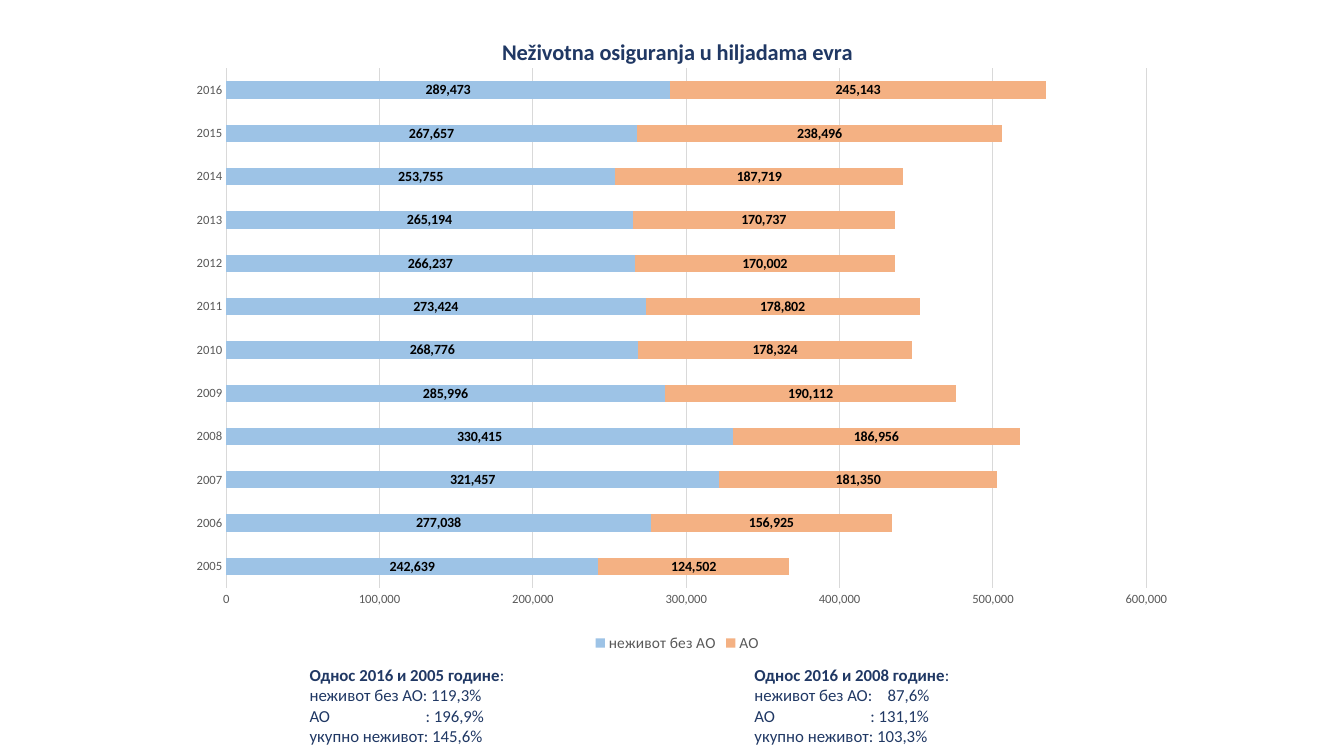
from dataclasses import dataclass

from lxml import etree
from pptx import Presentation
from pptx.chart.data import CategoryChartData
from pptx.dml.color import RGBColor
from pptx.enum.chart import XL_CHART_TYPE, XL_LABEL_POSITION, XL_LEGEND_POSITION, XL_TICK_MARK
from pptx.enum.text import MSO_AUTO_SIZE
from pptx.oxml.ns import qn
from pptx.util import Inches, Pt

STACKED = XL_CHART_TYPE.BAR_STACKED
BOTTOM = XL_LEGEND_POSITION.BOTTOM
CENTER = XL_LABEL_POSITION.CENTER
NO_TICK = XL_TICK_MARK.NONE
GROW = MSO_AUTO_SIZE.SHAPE_TO_FIT_TEXT

WIDE, HIGH = 13.33, 7.5
FACE = "Calibri"
NAVY, GREY, RULE, BLACK = "203864", "595959", "D9D9D9", "000000"
COUNT = "#,##0"


@dataclass
class Band:
    name: str
    color: str
    vals: tuple[int, ...]


@dataclass
class Row:
    text: str
    stop: float = 0  # tab stop in inches


@dataclass
class Note:
    left: float  # share of slide width
    width: float
    head: str
    rows: tuple[Row, ...]


BANDS = (
    Band("неживот без АО", "9DC3E6",
         (242639, 277038, 321457, 330415, 285996, 268776,
          273424, 266237, 265194, 253755, 267657, 289473)),
    Band("АО", "F4B183",
         (124502, 156925, 181350, 186956, 190112, 178324,
          178802, 170002, 170737, 187719, 238496, 245143)),
)
NOTES = (
    Note(0.223, 0.212, "Однос 2016 и 2005 године",
         (Row("неживот без АО: 119,3%"), Row("АО\t: 196,9%", 1.15),
          Row("укупно неживот: 145,6%"))),
    Note(0.554, 0.218, "Однос 2016 и 2008 године",
         (Row("неживот без АО:\t87,6%", 1.32), Row("АО\t: 131,1%", 1.15),
          Row("укупно неживот: 103,3%"))),
)


def paint(text: str) -> RGBColor:
    return RGBColor.from_string(text)


def area(left: float, top: float, width: float, height: float) -> list[int]:
    """Turn shares of the slide into lengths."""
    return [Inches(left * WIDE), Inches(top * HIGH),
            Inches(width * WIDE), Inches(height * HIGH)]


def style(font, size: float, color: str, bold: bool = False) -> None:
    font.name, font.size, font.bold = FACE, Pt(size), bold
    font.color.rgb = paint(color)


def write(para, text: str, size: float = 12, color: str = NAVY,
          bold: bool = False) -> None:
    run = para.add_run()
    run.text = text
    style(run.font, size, color, bold)


def place(part, index: int, **marks) -> None:
    """Give a chart part a manual layout."""
    for old in part.findall(qn("c:layout")):
        part.remove(old)
    frame = etree.Element(qn("c:layout"))
    inner = etree.SubElement(frame, qn("c:manualLayout"))
    for tag, val in marks.items():
        etree.SubElement(inner, qn(f"c:{tag}")).set("val", str(val))
    part.insert(index, frame)


def rule(line) -> None:
    line.color.rgb = paint(RULE)
    line.width = Pt(0.75)


def draw_chart(slide) -> None:
    data = CategoryChartData(number_format=COUNT)
    data.categories = [str(year) for year in range(2005, 2017)]
    for band in BANDS:
        data.add_series(band.name, band.vals)
    chart = slide.shapes.add_chart(
        STACKED, *area(0.1335, 0.0173, 0.741, 0.851), data).chart
    style(chart.font, 10, BLACK)

    # Title and plot area
    chart.has_title = True
    title = chart.chart_title
    write(title.text_frame.paragraphs[0], "Neživotna osiguranja u hiljadama evra",
          size=16, bold=True)
    title.include_in_layout = False
    place(title._element, 1, xMode="edge", yMode="edge", x=0.32, y=0.03)
    place(chart.plots[0]._element.getparent(), 0, layoutTarget="inner",
          xMode="edge", yMode="edge", x=0.047, y=0.086, w=0.924, h=0.808)

    # Legend
    chart.has_legend = True
    chart.legend.position = BOTTOM
    chart.legend.include_in_layout = False
    style(chart.legend.font, 11, GREY)

    # Axes
    years, sums = chart.category_axis, chart.value_axis
    for axis in (years, sums):
        axis.major_tick_mark = axis.minor_tick_mark = NO_TICK
        style(axis.tick_labels.font, 9, GREY)
    rule(years.format.line)
    sums.format.line.fill.background()
    sums.has_major_gridlines = True
    rule(sums.major_gridlines.format.line)
    sums.minimum_scale, sums.maximum_scale = 0, 600000
    sums.major_unit = 100000
    sums.tick_labels.number_format = COUNT
    sums.tick_labels.number_format_is_linked = False

    # Bars and labels
    plot = chart.plots[0]
    plot.gap_width, plot.overlap = 150, 100
    plot.vary_by_categories = False
    for band, bars in zip(BANDS, plot.series):
        bars.format.fill.solid()
        bars.format.fill.fore_color.rgb = paint(band.color)
        bars.invert_if_negative = False
        tags = bars.data_labels
        tags.show_value = True
        tags.number_format = COUNT
        tags.number_format_is_linked = False
        tags.position = CENTER
        style(tags.font, 10, BLACK, bold=True)


def draw_note(slide, note: Note) -> None:
    box = slide.shapes.add_textbox(*area(note.left, 0.873, note.width, 0.121))
    frame = box.text_frame
    frame.word_wrap = True
    frame.auto_size = GROW
    head = frame.paragraphs[0]
    write(head, note.head, bold=True)
    write(head, ":")
    for row in note.rows:
        para = frame.add_paragraph()
        write(para, row.text)
        if row.stop:
            tabs = etree.SubElement(para._p.get_or_add_pPr(), qn("a:tabLst"))
            etree.SubElement(tabs, qn("a:tab"), pos=str(Inches(row.stop)), algn="l")


def main() -> None:
    deck = Presentation()
    deck.slide_width, deck.slide_height = Inches(WIDE), Inches(HIGH)
    slide = deck.slides.add_slide(deck.slide_layouts[6])
    draw_chart(slide)
    for note in NOTES:
        draw_note(slide, note)
    deck.save("out.pptx")


if __name__ == "__main__":
    main()
